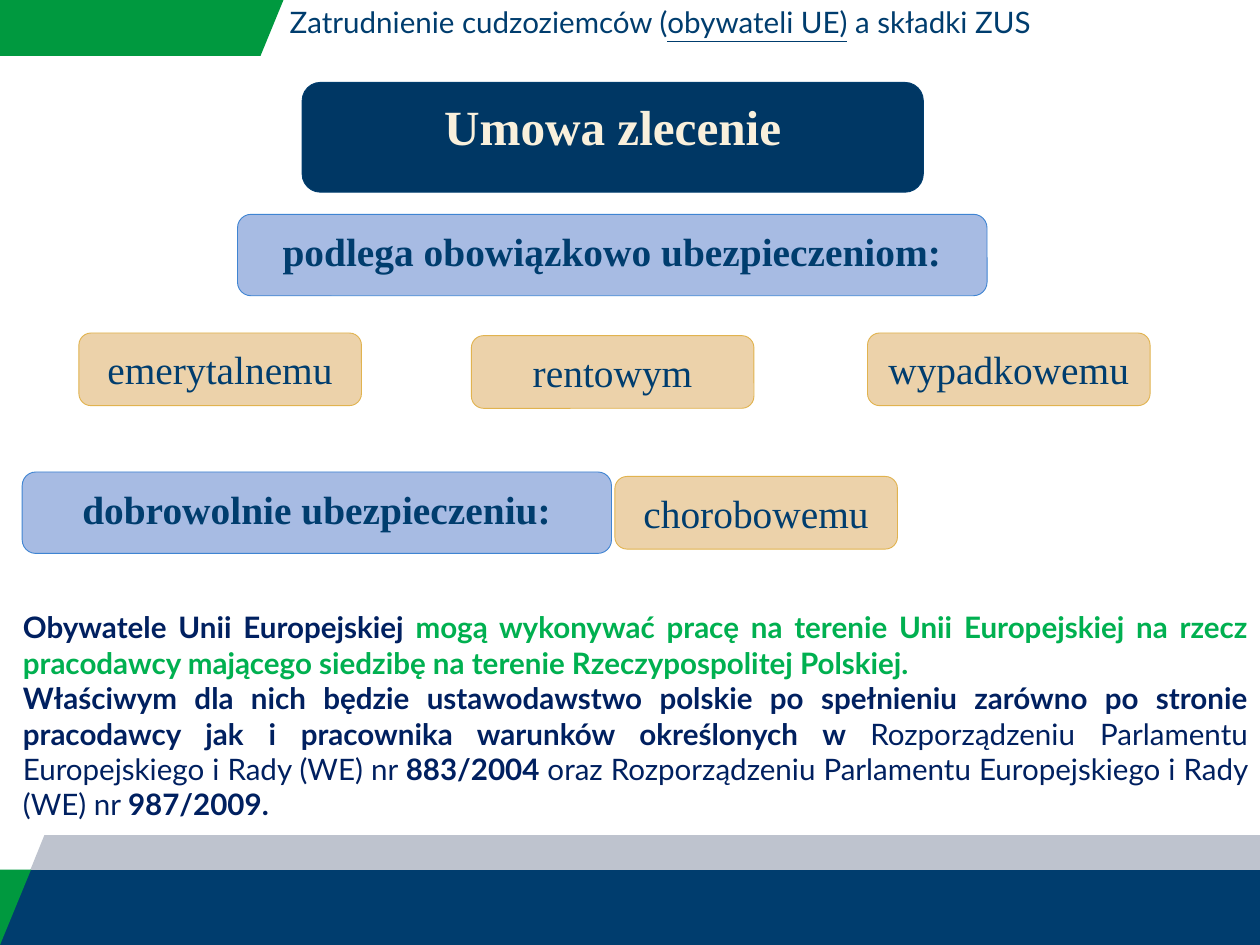
"""Slide on the social insurance owed under a contract of mandate."""
from itertools import cycle

from pptx import Presentation
from pptx import util as u
from pptx.dml.color import RGBColor
from pptx.enum import shapes, text

GREEN = RGBColor(0x00, 0x99, 0x3F)
GREY = RGBColor(0xBE, 0xC3, 0xCE)
NAVY = RGBColor(0x00, 0x3D, 0x6E)
DEEP_NAVY = RGBColor(0x00, 0x37, 0x64)
CREAM = RGBColor(0xF9, 0xF0, 0xDC)
BLUE = RGBColor(0xA7, 0xBB, 0xE3)
BLUE_EDGE = RGBColor(0x3F, 0x84, 0xD2)
SAND = RGBColor(0xEC, 0xD2, 0xAA)
SAND_EDGE = RGBColor(0xE1, 0xB3, 0x4F)
INK = RGBColor(0x00, 0x20, 0x60)
BRIGHT_GREEN = RGBColor(0x00, 0xB0, 0x50)

deck = Presentation()
deck.slide_width, deck.slide_height = u.Inches(14.22), u.Inches(10.67)
slide = deck.slides.add_slide(deck.slide_layouts[5])


def area(*percents):
    """Turn alternating horizontal and vertical percentages into lengths."""
    sides = cycle((deck.slide_width, deck.slide_height))
    return [u.Emu(round(share * side / 100)) for share, side in zip(percents, sides)]


def write(frame, paragraphs, font="Times New Roman", size=32, color=NAVY,
          align=text.PP_ALIGN.CENTER, top=0.05):
    """Fill a frame with paragraphs of (words, format) runs."""
    frame.word_wrap = True
    frame.auto_size = text.MSO_AUTO_SIZE.NONE
    frame.vertical_anchor = text.MSO_ANCHOR.TOP
    frame.margin_top = u.Inches(top)
    for number, runs in enumerate(paragraphs):
        paragraph = frame.add_paragraph() if number else frame.paragraphs[0]
        paragraph.alignment = align
        for words, look in runs:
            run = paragraph.add_run()
            run.text = words
            run.font.name, run.font.size = font, u.Pt(size)
            run.font.bold = look.get("bold", False)
            run.font.underline = look.get("underline", False)
            run.font.color.rgb = look.get("color", color)


bands = [
    (GREEN, [(22.5, 0), (20.68, 5.9), (0, 5.9), (0, 0)]),
    (GREY, [(0, 100), (3.52, 88.38), (100, 88.38), (100, 100)]),
    (NAVY, [(0, 92.03), (100, 92.03), (100, 100), (0, 100)]),
    (GREEN, [(0, 92.03), (0, 100), (2.46, 92.03)]),
]
for fill, corners in bands:
    start, *others = [area(*corner) for corner in corners]
    outline = slide.shapes.build_freeform(*start)
    outline.add_line_segments(others)
    band = outline.convert_to_shape()
    band.shadow.inherit = False
    band.fill.solid()
    band.fill.fore_color.rgb = fill
    band.line.fill.background()

heading = slide.shapes.title
heading.left, heading.top, heading.width, heading.height = area(22.29, 0, 63.15, 9.56)
write(heading.text_frame, [[
    ("Zatrudnienie cudzoziemców (", {}),
    ("obywateli UE)", {"underline": True}),
    (" a składki ZUS", {}),
]], font="Lato", size=24, align=text.PP_ALIGN.LEFT)

contract = (DEEP_NAVY, NAVY, CREAM, 40, True)
rule = (BLUE, BLUE_EDGE, NAVY, 32, True)
insurance = (SAND, SAND_EDGE, NAVY, 32, False)
insurance_size = (22.43, 7.69)
boxes = [
    ("Umowa zlecenie", contract, (23.98, 8.72), (49.3, 11.62)),
    ("podlega obowiązkowo ubezpieczeniom:", rule, (18.85, 22.68), (59.49, 8.62)),
    ("dobrowolnie ubezpieczeniu:", rule, (1.76, 49.95), (46.77, 8.62)),
    ("emerytalnemu", insurance, (6.26, 35.24), insurance_size),
    ("rentowym", insurance, (37.41, 35.52), insurance_size),
    ("wypadkowemu", insurance, (68.85, 35.24), insurance_size),
    ("chorobowemu", insurance, (48.8, 50.42), insurance_size),
]
for label, (fill, edge, color, size, bold), corner, extent in boxes:
    box = slide.shapes.add_shape(shapes.MSO_SHAPE.ROUNDED_RECTANGLE, *area(*corner, *extent))
    box.shadow.inherit = False
    box.fill.solid()
    box.fill.fore_color.rgb = fill
    box.line.color.rgb = edge
    box.line.width = u.Pt(0.75)
    write(box.text_frame, [[(label, {"bold": bold})]], size=size, color=color, top=0.1)

explanation = slide.shapes.add_textbox(*area(1.13, 64.01, 98.59, 23.62))
write(explanation.text_frame, [
    [
        ("Obywatele Unii Europejskiej ", {"bold": True}),
        ("mogą wykonywać pracę na terenie Unii Europejskiej na rzecz pracodawcy "
         "mającego siedzibę na terenie Rzeczypospolitej Polskiej.",
         {"bold": True, "color": BRIGHT_GREEN}),
    ],
    [
        ("Właściwym dla nich będzie ustawodawstwo polskie po spełnieniu zarówno po "
         "stronie pracodawcy jak i pracownika warunków określonych w ", {"bold": True}),
        ("Rozporządzeniu Parlamentu Europejskiego i Rady (WE) nr ", {}),
        ("883/2004", {"bold": True}),
        (" oraz Rozporządzeniu Parlamentu Europejskiego i Rady (WE) nr ", {}),
        ("987/2009.", {"bold": True}),
    ],
], font="Lato", size=24, color=INK, align=text.PP_ALIGN.JUSTIFY)

deck.save("out.pptx")
